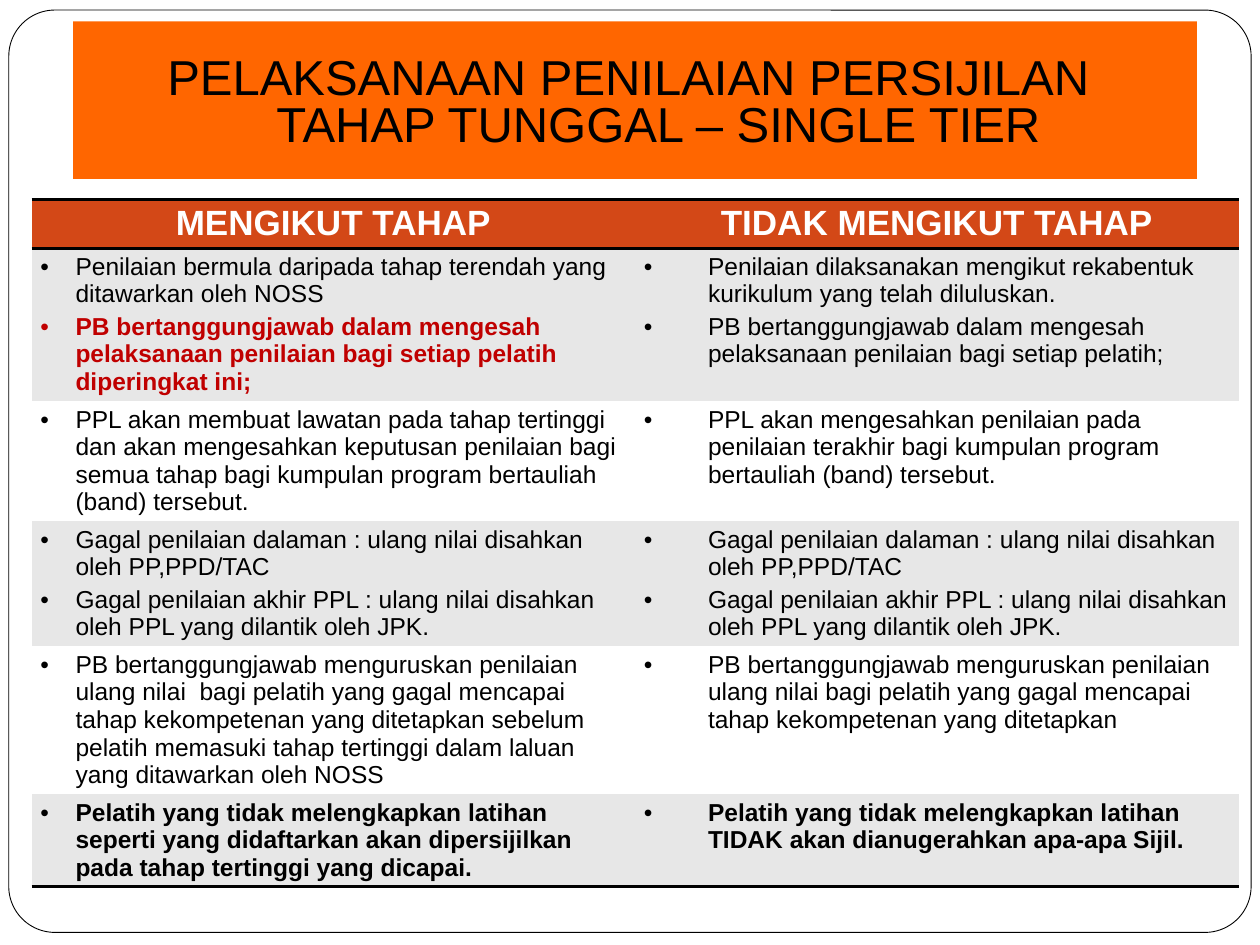
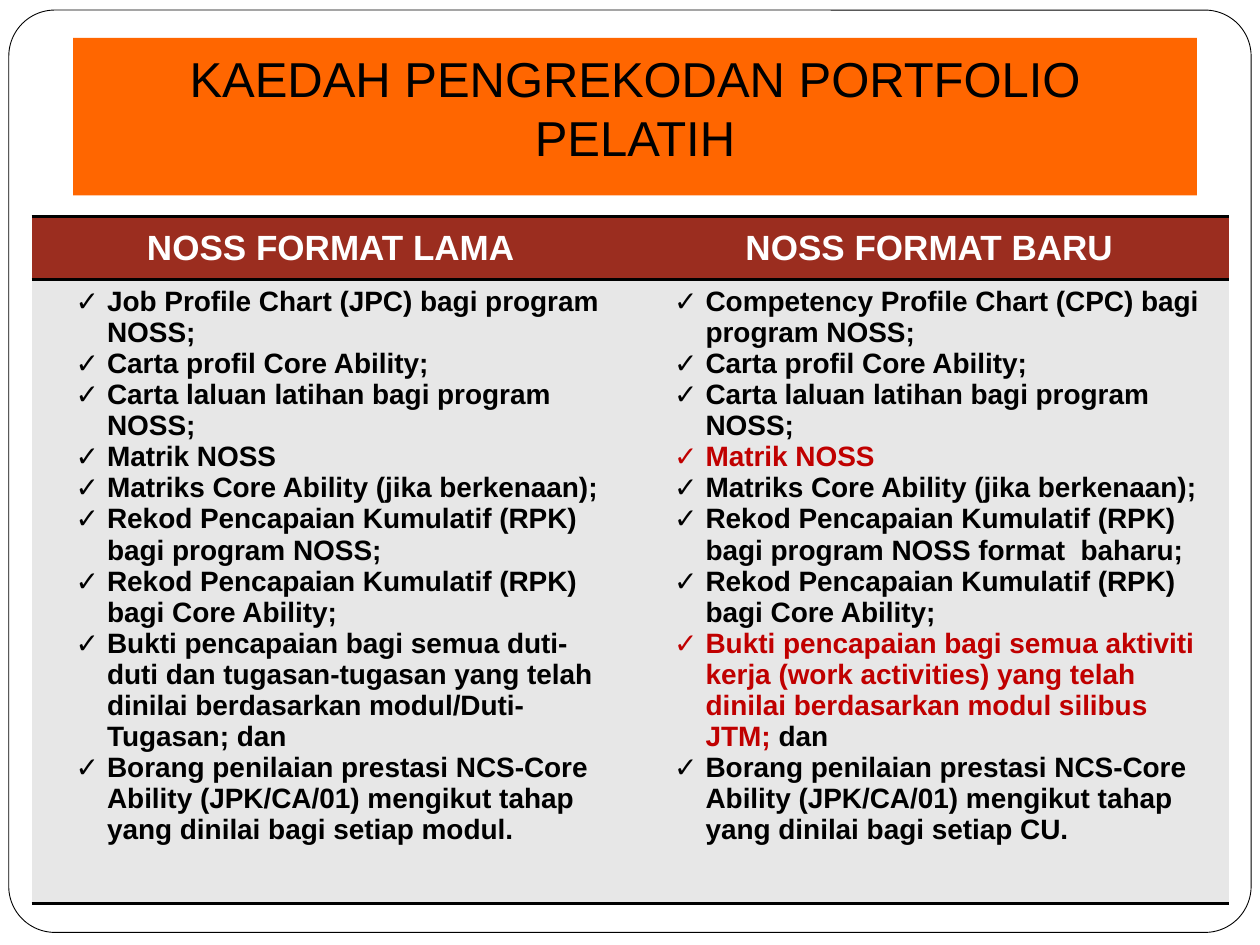
from pptx import Presentation
from pptx.dml.color import RGBColor as Rgb
from pptx.enum.shapes import MSO_SHAPE as Kind
from pptx.enum.text import MSO_ANCHOR as Anchor, PP_ALIGN as Align
from pptx.oxml.ns import qn
from pptx.util import Inches, Pt
from lxml.etree import SubElement as Sub

INK, PAPER, RED, ORANGE, GREY = "000000", "FFFFFF", "C00000", "FF6600", "E7E7E7"
FONT = "Arial"

STEPS = [
    (["Penilaian bermula daripada tahap terendah yang ditawarkan oleh NOSS",
      "*PB bertanggungjawab dalam mengesah pelaksanaan penilaian bagi setiap pelatih diperingkat ini;*"],
     ["Penilaian dilaksanakan mengikut rekabentuk kurikulum yang telah diluluskan.",
      "PB bertanggungjawab dalam mengesah pelaksanaan penilaian bagi setiap pelatih;"]),
    (["PPL akan membuat lawatan pada tahap tertinggi dan akan mengesahkan keputusan penilaian "
      "bagi semua tahap bagi kumpulan program bertauliah (band) tersebut."],
     ["PPL akan mengesahkan penilaian pada penilaian terakhir bagi kumpulan program "
      "bertauliah (band) tersebut."]),
    (["Gagal penilaian dalaman : ulang nilai disahkan oleh PP,PPD/TAC",
      "Gagal penilaian akhir PPL : ulang nilai disahkan oleh PPL yang dilantik oleh JPK."],) * 2,
    (["PB bertanggungjawab menguruskan penilaian ulang nilai  bagi pelatih yang gagal mencapai "
      "tahap kekompetenan yang ditetapkan sebelum pelatih memasuki tahap tertinggi dalam laluan "
      "yang ditawarkan oleh NOSS"],
     ["PB bertanggungjawab menguruskan penilaian ulang nilai bagi pelatih yang gagal mencapai "
      "tahap kekompetenan yang ditetapkan"]),
    (["Pelatih yang tidak melengkapkan latihan seperti yang didaftarkan akan dipersijilkan "
      "pada tahap tertinggi yang dicapai."],
     ["Pelatih yang tidak melengkapkan latihan TIDAK akan dianugerahkan apa-apa Sijil."]),
]

FILES = [(
    ["Job Profile Chart (JPC) bagi program NOSS;",
     "Carta profil Core Ability;",
     "Carta laluan latihan bagi program NOSS;",
     "Matrik NOSS",
     "Matriks Core Ability (jika berkenaan);",
     "Rekod Pencapaian Kumulatif (RPK) bagi program NOSS;",
     "Rekod Pencapaian Kumulatif (RPK) bagi Core Ability;",
     "Bukti pencapaian bagi semua duti-duti dan tugasan-tugasan yang telah dinilai "
     "berdasarkan modul/Duti-Tugasan; dan",
     "Borang penilaian prestasi NCS-Core Ability (JPK/CA/01) mengikut tahap yang dinilai "
     "bagi setiap modul."],
    ["Competency Profile Chart (CPC) bagi program NOSS;",
     "Carta profil Core Ability;",
     "Carta laluan latihan bagi program NOSS;",
     "*Matrik NOSS*",
     "Matriks Core Ability (jika berkenaan);",
     "Rekod Pencapaian Kumulatif (RPK) bagi program NOSS format  baharu;",
     "Rekod Pencapaian Kumulatif (RPK) bagi Core Ability;",
     "*Bukti pencapaian bagi semua aktiviti kerja (work activities) yang telah dinilai "
     "berdasarkan modul silibus JTM; *dan",
     "Borang penilaian prestasi NCS-Core Ability (JPK/CA/01) mengikut tahap yang dinilai "
     "bagi setiap CU."],
)]


def tint(part, code):
    part.solid()
    part.fore_color.rgb = Rgb.from_string(code)


def put(item, **vals):
    for key, val in vals.items():
        setattr(item, key, val)


def style(font, size, code, bold=False):
    put(font, name=FONT, size=Pt(size), bold=bold)
    tint(font.fill, code)


def dent(para, left, hang):
    props = para._p.get_or_add_pPr()
    props.set("marL", str(Inches(left)))
    props.set("indent", str(-Inches(hang)))
    return props


def panel(slide, kind, box, code):
    shape = slide.shapes.add_shape(kind, *map(Inches, box))
    shape.shadow.inherit = False
    tint(shape.fill, code)
    return shape


def frame(slide):
    shape = panel(slide, Kind.ROUNDED_RECTANGLE, (0.07, 0.08, 9.86, 7.32), PAPER)
    shape.adjustments[0] = 0.05
    tint(shape.line.fill, INK)
    shape.line.width = Pt(0.5)


def title(slide, top, text, pad, gap=1.0, hang=0):
    shape = panel(slide, Kind.RECTANGLE, (0.58, top, 8.92, 1.25), ORANGE)
    shape.line.fill.background()
    area = shape.text_frame
    put(area, word_wrap=True, vertical_anchor=Anchor.MIDDLE,
        margin_top=Inches(pad[0]), margin_bottom=Inches(pad[1]))
    para = area.paragraphs[0]
    para.text = text
    put(para, alignment=Align.CENTER, line_spacing=gap)
    dent(para, hang, hang)
    style(para.font, 28, INK)
    for run in para.runs:
        style(run.font, 28, INK)


def edge(cell, sides):
    props = cell._tc.get_or_add_tcPr()
    for side in "LRTB":
        line = Sub(props, qn("a:ln" + side), w=str(Pt(2)))
        if side in sides:
            fill = Sub(line, qn("a:solidFill"))
            Sub(fill, qn("a:srgbClr"), val=INK)
        else:
            Sub(line, qn("a:noFill"))


def head(cell, text, code, anchor):
    edge(cell, "TB")
    tint(cell.fill, code)
    cell.vertical_anchor = anchor
    para = cell.text_frame.paragraphs[0]
    para.alignment = Align.CENTER
    run = para.add_run()
    run.text = text
    style(run.font, 20, PAPER, True)


def points(cell, items, look, dents, bold):
    area = cell.text_frame
    for num, item in enumerate(items):
        para = area.add_paragraph() if num else area.paragraphs[0]
        para.space_before = Pt(look["space"])
        props = dent(para, *dents)
        Sub(props, qn("a:buFont"), typeface=FONT)
        Sub(props, qn("a:buChar"), char=look["mark"])
        for odd, text in enumerate(item.split("*")):
            if text:
                run = para.add_run()
                run.text = text
                red = odd % 2 == 1
                style(run.font, look["size"], RED if red else INK, bold or red)


def grid(slide, box, tops, heads, rows, look):
    count = len(rows) + 1
    table = slide.shapes.add_table(count, 2, *map(Inches, box)).table
    put(table, first_row=False, horz_banding=False)
    for row, tall in zip(table.rows, tops):
        row.height = Inches(tall)
    for col in table.columns:
        col.width = Inches(box[2] / 2)
    side, edge_pad = map(Inches, look["pad"])
    for cell in table.iter_cells():
        put(cell, margin_left=side, margin_right=side, margin_top=edge_pad, margin_bottom=edge_pad)
    for col, text in enumerate(heads):
        head(table.cell(0, col), text, look["head"], look["anchor"])
    for num, pair in enumerate(rows, 1):
        last = num == len(rows)
        for col, items in enumerate(pair):
            cell = table.cell(num, col)
            edge(cell, "T" * (num == 1) + "B" * last)
            tint(cell.fill, GREY if num % 2 else PAPER)
            points(cell, items, look, look["dents"][col], last)


def tiers(slide):
    frame(slide)
    look = dict(size=14, mark="•", space=2.8, pad=(0.07, 0.04), head="D34817",
                anchor=Anchor.TOP, dents=[(0.28, 0.28), (0.51, 0.51)])
    grid(slide, (0.25, 1.58, 9.58, 5.37), (0.39, 1.2, 0.94, 0.98, 1.14, 0.72),
         ("MENGIKUT TAHAP", "TIDAK MENGIKUT TAHAP"), STEPS, look)
    title(slide, 0.17, "PELAKSANAAN PENILAIAN PERSIJILAN \vTAHAP TUNGGAL – SINGLE TIER",
          (0.17, 0.1), 0.8, 0.37)


def records(slide):
    frame(slide)
    title(slide, 0.3, "KAEDAH PENGREKODAN PORTFOLIO PELATIH", (0.05, 0.19))
    look = dict(size=16, mark="✓", space=0, pad=(0.1, 0.05), head="9B2D1F",
                anchor=Anchor.MIDDLE, dents=[(0.5, 0.25)] * 2)
    grid(slide, (0.25, 1.72, 9.5, 5.45), (0.5, 4.95),
         ("NOSS FORMAT LAMA", "NOSS FORMAT BARU"), FILES, look)


def main():
    deck = Presentation()
    put(deck, slide_width=Inches(10), slide_height=Inches(7.5))
    for build in (tiers, records):
        build(deck.slides.add_slide(deck.slide_layouts[6]))
    deck.save("out.pptx")


if __name__ == "__main__":
    main()
